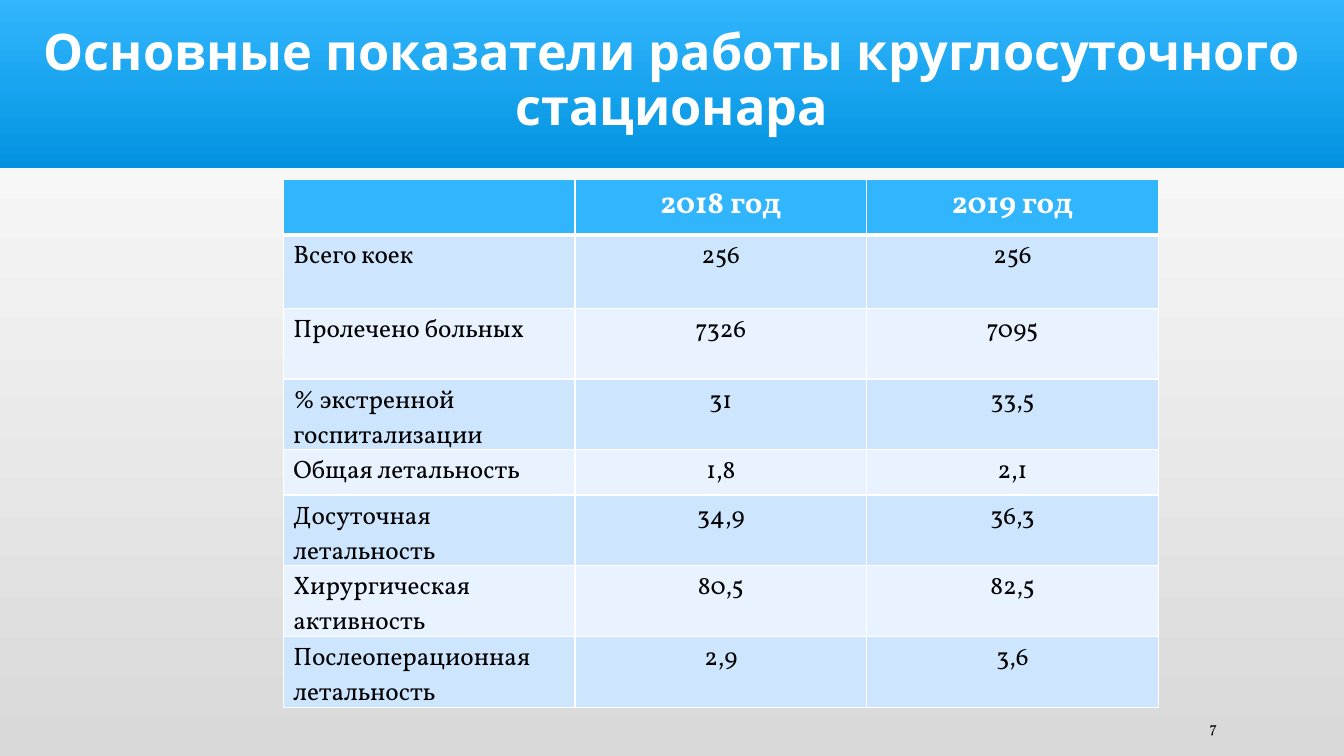
import pptx
import pptx.dml.color
import pptx.enum.shapes
import pptx.enum.text
import pptx.oxml.ns
import pptx.util
from dataclasses import dataclass
from lxml import etree

Inches = pptx.util.Inches
Pt = pptx.util.Pt
RGBColor = pptx.dml.color.RGBColor
Align = pptx.enum.text.PP_ALIGN
Anchor = pptx.enum.text.MSO_ANCHOR
qn = pptx.oxml.ns.qn


@dataclass(frozen=True)
class Theme:
    title_font: str = "Open Sans"
    body_font: str = "Vollkorn"
    title_size: int = 36
    header_size: int = 22
    body_size: int = 18
    number_size: int = 11
    white: str = "FFFFFF"
    black: str = "000000"
    grey: str = "D9D9D9"
    blue: str = "31B6FD"
    deep_blue: str = "0293E0"
    bands: tuple = ("CEE5FE", "E8F3FF")


THEME = Theme()

HEADER = ("", "2018 год", "2019 год")
INDICATORS = (
    ("Всего коек", "256", "256"),
    ("Пролечено больных", "7326", "7095"),
    ("% экстренной госпитализации", "31", "33,5"),
    ("Общая летальность", "1,8", "2,1"),
    ("Досуточная летальность", "34,9", "36,3"),
    ("Хирургическая активность", "80,5", "82,5"),
    ("Послеоперационная летальность", "2,9", "3,6"),
)
ROW_HEIGHTS = (0.55, 0.73, 0.7, 0.7, 0.45, 0.45, 0.68, 0.71)
COLUMN_WIDTH = 2.893


def set_gradient(fill, start, end, angle):
    fill.gradient()
    fill.gradient_angle = angle
    for stop, color in zip(fill.gradient_stops, (start, end)):
        stop.color.rgb = RGBColor.from_string(color)


def set_text(tf, text, font, size, color, align, bold=False):
    tf.text = text
    p = tf.paragraphs[0]
    p.alignment = align
    for r in p.runs:
        r.font.name = font
        r.font.size = Pt(size)
        r.font.bold = bold
        r.font.color.rgb = RGBColor.from_string(color)
    return p


def add_band(slide, left, top, width, height):
    sp = slide.shapes.add_shape(
        pptx.enum.shapes.MSO_SHAPE.RECTANGLE,
        Inches(left), Inches(top), Inches(width), Inches(height))
    sp.shadow.inherit = False
    sp.line.fill.background()
    set_gradient(sp.fill, THEME.blue, THEME.deep_blue, 270)


def add_label(slide, box, text, font, size, color, align, bold=False):
    sp = slide.shapes.add_textbox(*(Inches(v) for v in box))
    tf = sp.text_frame
    tf.word_wrap = True
    tf.vertical_anchor = Anchor.MIDDLE
    return set_text(tf, text, font, size, color, align, bold)


def set_borders(cell, bottom_width):
    tc_pr = cell._tc.get_or_add_tcPr()
    for side, width in (("L", 1), ("R", 1), ("T", 1), ("B", bottom_width)):
        ln = etree.SubElement(tc_pr, qn(f"a:ln{side}"), w=str(Pt(width)))
        fill = etree.SubElement(ln, qn("a:solidFill"))
        etree.SubElement(fill, qn("a:srgbClr"), val=THEME.white)


def add_indicator_table(slide, left, top):
    rows = (HEADER, *INDICATORS)
    table = slide.shapes.add_table(
        len(rows), len(HEADER), Inches(left), Inches(top),
        Inches(COLUMN_WIDTH * len(HEADER)), Inches(sum(ROW_HEIGHTS))).table
    for column in table.columns:
        column.width = Inches(COLUMN_WIDTH)
    for i, values in enumerate(rows):
        table.rows[i].height = Inches(ROW_HEIGHTS[i])
        is_header = i == 0
        background = THEME.blue if is_header else THEME.bands[(i - 1) % 2]
        size = THEME.header_size if is_header else THEME.body_size
        color = THEME.white if is_header else THEME.black
        for j, value in enumerate(values):
            cell = table.cell(i, j)
            set_borders(cell, 3 if is_header else 1)
            cell.fill.solid()
            cell.fill.fore_color.rgb = RGBColor.from_string(background)
            set_text(cell.text_frame, value, THEME.body_font, size, color,
                     Align.CENTER if j else Align.LEFT, is_header)


def main():
    prs = pptx.Presentation()
    prs.slide_width = Inches(13.33)
    prs.slide_height = Inches(7.5)
    slide = prs.slides.add_slide(prs.slide_layouts[6])
    set_gradient(slide.background.fill, THEME.grey, THEME.white, 90)
    add_band(slide, 0, 0, 13.33, 1.67)
    title = add_label(
        slide, (0, 0, 13.33, 1.62),
        "Основные показатели работы круглосуточного стационара",
        THEME.title_font, THEME.title_size, THEME.white, Align.CENTER, True)
    title.line_spacing = 0.9
    add_indicator_table(slide, 2.81, 1.78)
    add_label(slide, (11.25, 7.09, 0.92, 0.26), "7", THEME.body_font,
              THEME.number_size, THEME.black, Align.RIGHT)
    prs.save("out.pptx")


if __name__ == "__main__":
    main()
